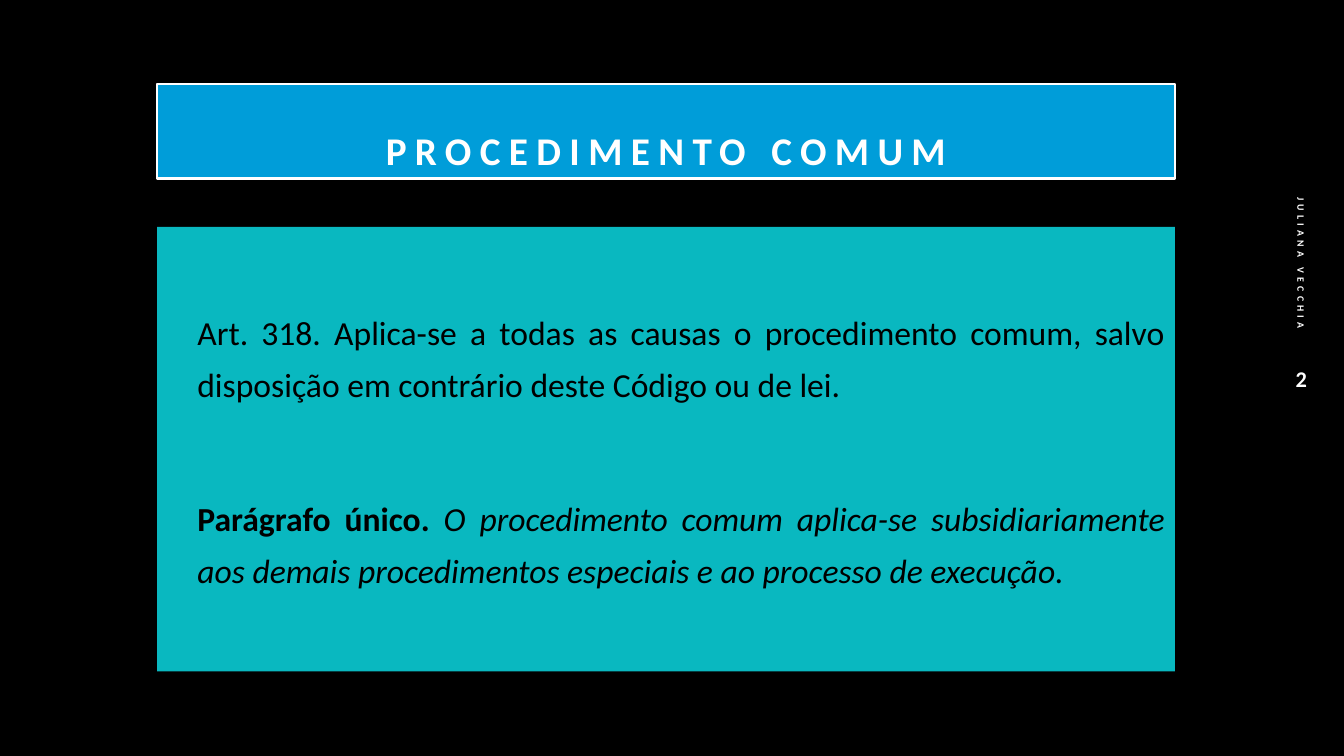
from pptx import Presentation
from pptx.dml.color import RGBColor
from pptx.enum.text import MSO_ANCHOR, MSO_AUTO_SIZE, PP_ALIGN
from pptx.oxml.ns import qn
from pptx.util import Cm, Pt

BLACK = RGBColor(0x00, 0x00, 0x00)
WHITE = RGBColor(0xFF, 0xFF, 0xFF)
BLUE = RGBColor(0x00, 0x9D, 0xD9)
TEAL = RGBColor(0x09, 0xB8, 0xC0)
FONT = "Calibri"
TOP, MIDDLE, BOTTOM = MSO_ANCHOR.TOP, MSO_ANCHOR.MIDDLE, MSO_ANCHOR.BOTTOM
CENTER, RIGHT, JUSTIFY = PP_ALIGN.CENTER, PP_ALIGN.RIGHT, PP_ALIGN.JUSTIFY
FIXED = MSO_AUTO_SIZE.NONE

ARTICLE = [
    [("Art. 318. Aplica-se a todas as causas o procedimento comum, salvo "
      "disposição em contrário deste Código ou de lei.", False, False)],
    [("Parágrafo único. ", True, False),
     ("O procedimento comum aplica-se subsidiariamente aos demais "
      "procedimentos especiais e ao processo de execução.", False, True)],
]


def place(shape, box, anchor):
    shape.left, shape.top, shape.width, shape.height = (Cm(length) for length in box)
    frame = shape.text_frame
    frame.auto_size = FIXED
    frame.word_wrap = True
    frame.vertical_anchor = anchor
    return frame


def add_span(para, text, size, color, bold=False, italic=False, spacing=0):
    span = para.add_run()
    span.text = text
    font = span.font
    font.name, font.size = FONT, Pt(size)
    font.bold, font.italic = bold, italic
    font.color.rgb = color
    if spacing:
        span._r.get_or_add_rPr().set("spc", str(spacing * 100))


def add_title(slide, box):
    title = slide.shapes.title
    frame = place(title, box, BOTTOM)
    title.fill.solid()
    title.fill.fore_color.rgb = BLUE
    title.line.color.rgb = WHITE
    title.line.width = Pt(1.5)
    para = frame.paragraphs[0]
    para.alignment = CENTER
    para.line_spacing = 1.2
    add_span(para, "PROCEDIMENTO COMUM", 28, WHITE, bold=True, spacing=6)


def add_article(slide, box):
    body = slide.placeholders[1]
    frame = place(body, box, TOP)
    frame.margin_top = Cm(1.83)
    body.fill.solid()
    body.fill.fore_color.rgb = TEAL
    for index, spans in enumerate(ARTICLE):
        para = frame.add_paragraph() if index else frame.paragraphs[0]
        para.alignment = JUSTIFY
        para.line_spacing = 1.3
        para.space_before = Pt(58 * index)
        properties = para._p.get_or_add_pPr()
        properties.set("marL", str(Cm(0.76)))
        properties.set("indent", "0")
        properties.append(properties.makeelement(qn("a:buNone"), {}))
        for text, bold, italic in spans:
            add_span(para, text, 24, BLACK, bold, italic)


def add_label(slide, box, text, size, alignment, spacing=0, rotation=0):
    label = slide.shapes.add_textbox(0, 0, 0, 0)
    para = place(label, box, MIDDLE).paragraphs[0]
    label.rotation = rotation
    para.alignment = alignment
    add_span(para, text, size, WHITE, bold=True, spacing=spacing)


def add_margin(slide, box):
    left, top, width, height = box
    length, thickness, number_height = 7.42, 1.02, 1.19
    middle = left + width / 2
    author_box = (middle - length / 2, top + (length - thickness) / 2, length, thickness)
    number_box = (left, top + height - number_height, width, number_height)
    add_label(slide, author_box, "JULIANA VECCHIA ", 7, RIGHT, spacing=3, rotation=90)
    add_label(slide, number_box, "2", 16, CENTER)


def main():
    deck = Presentation()
    deck.slide_width, deck.slide_height = Cm(33.87), Cm(19.05)
    slide = deck.slides.add_slide(deck.slide_layouts[1])
    slide.background.fill.solid()
    slide.background.fill.fore_color.rgb = BLACK
    left, width = 3.96, 25.65
    add_title(slide, (left, 2.11, width, 2.39))
    add_article(slide, (left, 5.72, width, 11.2))
    add_margin(slide, (31.92, 1.27, 1.75, 8.86))
    deck.save("out.pptx")


if __name__ == "__main__":
    main()
